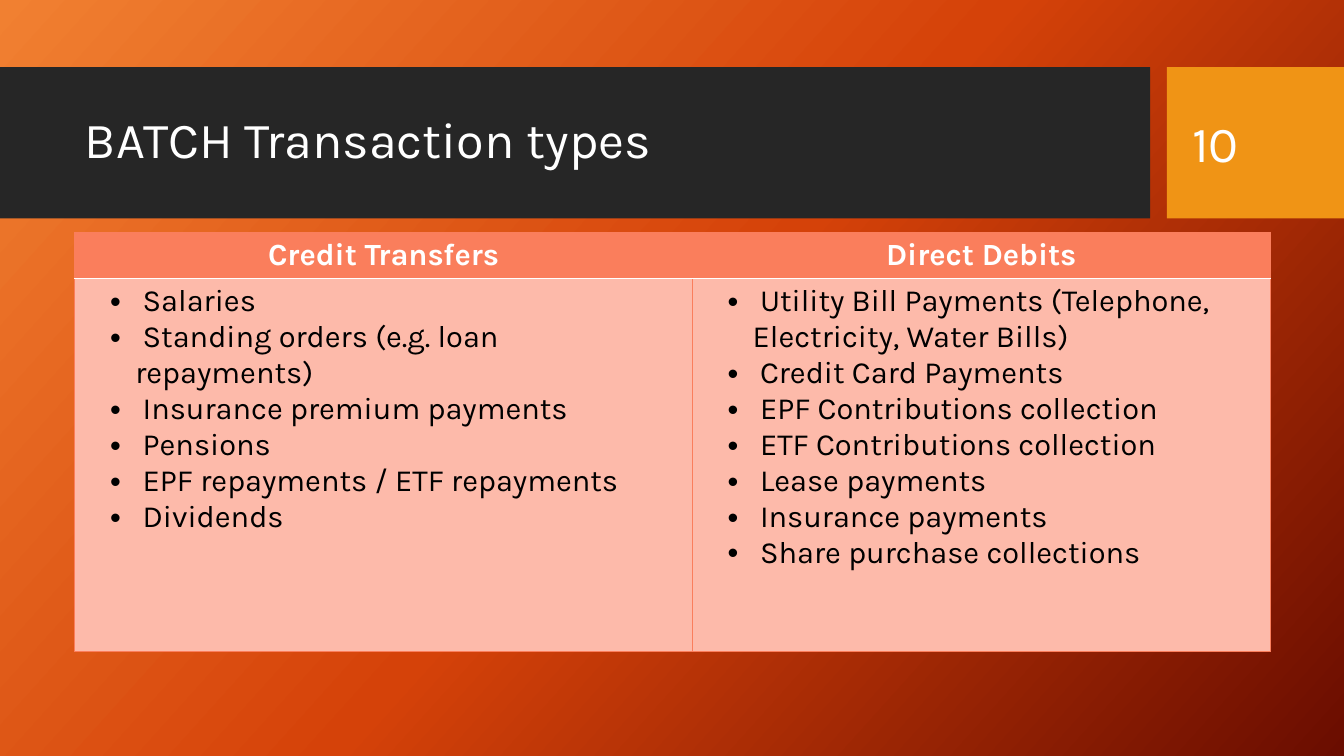
from lxml.etree import SubElement as sub
from pptx import Presentation
from pptx.dml.color import RGBColor as RGB
from pptx.enum.shapes import MSO_SHAPE as SHAPE
from pptx.enum.text import MSO_ANCHOR as ANCHOR, MSO_AUTO_SIZE as AUTO, PP_ALIGN as ALIGN
from pptx.oxml.ns import qn
from pptx.util import Pt

FONT = "Karla"
WHITE = RGB(0xFF, 0xFF, 0xFF)
BLACK = RGB(0x00, 0x00, 0x00)
DARK = RGB(0x26, 0x26, 0x26)
GOLD = RGB(0xF0, 0x94, 0x15)
CORAL = RGB(0xFA, 0x7E, 0x5C)
PINK = RGB(0xFD, 0xBA, 0xAA)
STOPS = [
    (0, RGB(0xF1, 0x80, 0x31)),
    (50, RGB(0xD5, 0x42, 0x09)),
    (100, RGB(0x6A, 0x0D, 0x00)),
]

LISTS = {
    "Credit Transfers": [
        " Salaries",
        " Standing orders (e.g. loan repayments)",
        " Insurance premium payments",
        " Pensions",
        " EPF repayments / ETF repayments",
        " Dividends",
    ],
    "Direct Debits": [
        " Utility Bill Payments (Telephone, Electricity, Water Bills)",
        " Credit Card Payments",
        " EPF Contributions collection",
        " ETF Contributions collection",
        " Lease payments",
        " Insurance payments",
        " Share purchase collections",
    ],
}


def write(para, text, size, color, bold=False):
    run = para.add_run()
    run.text = text
    font = run.font
    font.name, font.size, font.bold = FONT, Pt(size), bold
    font.color.rgb = color


def paint(cell, fill, top, base):
    """Set the four borders of a cell, then its fill."""
    props = cell._tc.get_or_add_tcPr()
    edges = [("L", CORAL), ("R", CORAL), ("T", top), ("B", base)]
    for side, color in edges:
        width = Pt(1) if color == WHITE else Pt(0.75)
        line = sub(props, qn("a:ln" + side), w=str(width))
        sub(sub(line, qn("a:solidFill")), qn("a:srgbClr"), val=str(color))
    cell.fill.solid()
    cell.fill.fore_color.rgb = fill


deck = Presentation()
deck.slide_width, deck.slide_height = Pt(960), Pt(540)
slide = deck.slides.add_slide(deck.slide_layouts[5])
shapes = slide.shapes

# Background
back = slide.background.fill
back.gradient()
back.gradient_angle = 360 - 42
stops = slide._element.find(".//" + qn("a:gsLst"))
for old in list(stops):
    stops.remove(old)
for pos, color in STOPS:
    stop = sub(stops, qn("a:gs"), pos=str(pos * 1000))
    sub(stop, qn("a:srgbClr"), val=str(color))

# Header band and number block
for left, width, color in [(0, 821.5, DARK), (833.5, 126.5, GOLD)]:
    band = shapes.add_shape(SHAPE.RECTANGLE, Pt(left), Pt(48), Pt(width), Pt(108))
    band.shadow.inherit = False
    band.fill.solid()
    band.fill.fore_color.rgb = color
    band.line.fill.background()

# Title and slide number
title = shapes.title
shapes._spTree.append(title._element)
title.left, title.top, title.width, title.height = Pt(53.5), Pt(59), Pt(757), Pt(85)
number = shapes.add_textbox(Pt(844.5), Pt(59), Pt(115.5), Pt(86))
for box, text in [(title, "BATCH Transaction types"), (number, "10")]:
    frame = box.text_frame
    frame.word_wrap = True
    frame.auto_size = AUTO.NONE
    frame.vertical_anchor = ANCHOR.MIDDLE
    para = frame.paragraphs[0]
    para.alignment = ALIGN.LEFT
    write(para, text, 36, WHITE)
title.text_frame.paragraphs[0].line_spacing = 0.9

# Table
table = shapes.add_table(2, 2, Pt(53.5), Pt(166), Pt(854), Pt(299.5)).table
table.horz_banding = False
table.rows[0].height, table.rows[1].height = Pt(33), Pt(266.5)
table.columns[0].width, table.columns[1].width = Pt(441), Pt(413)

for col, (head, items) in enumerate(LISTS.items()):
    cell = table.cell(0, col)
    paint(cell, CORAL, CORAL, WHITE)
    para = cell.text_frame.paragraphs[0]
    para.alignment = ALIGN.CENTER
    write(para, head, 22, WHITE, True)

    cell = table.cell(1, col)
    paint(cell, PINK, WHITE, CORAL)
    frame = cell.text_frame
    for row, item in enumerate(items):
        para = frame.add_paragraph() if row else frame.paragraphs[0]
        props = para._p.get_or_add_pPr()
        props.set("marL", str(Pt(36)))
        props.set("indent", str(Pt(-18)))
        sub(props, qn("a:buFont"), typeface="Arial")
        sub(props, qn("a:buChar"), char="•")
        write(para, item, 22, BLACK)

deck.save("out.pptx")
